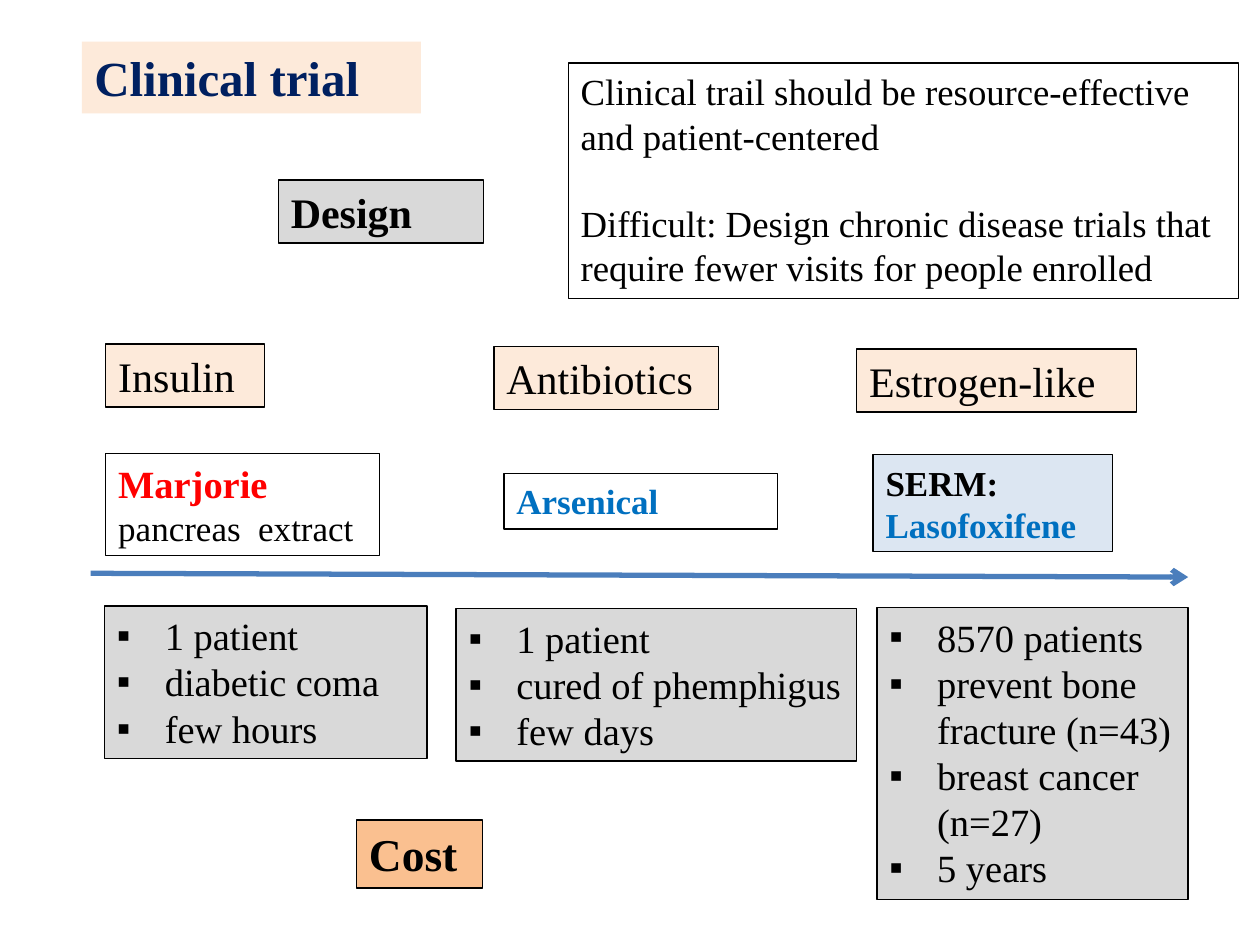
"""Builds a slide that compares the design and cost of three clinical trials."""
import pptx
import pptx.dml.color
import pptx.enum.text
import pptx.oxml
import pptx.oxml.ns
import pptx.util

Inches = pptx.util.Inches
Pt = pptx.util.Pt

FONT = "Times New Roman"
BLACK, NAVY, RED, BLUE = "000000", "002060", "FF0000", "0070C0"
PEACH, GRAY, ORANGE, PALE_BLUE = "FDEADA", "D9D9D9", "FAC090", "DCE6F2"
ARROW_BLUE = "4B7EBC"


def color(hex_value):
    return pptx.dml.color.RGBColor.from_string(hex_value)


def add_element(parent, tag, **attributes):
    element = pptx.oxml.parse_xml(f"<a:{tag} {pptx.oxml.ns.nsdecls('a')}/>")
    for name, value in attributes.items():
        element.set(name, value)
    parent.append(element)


class TrialSlide:
    def __init__(self, slide):
        self.slide = slide

    def box(self, left, top, width, height, fill=None, line_width=0.75):
        shape = self.slide.shapes.add_textbox(
            Inches(left), Inches(top), Inches(width), Inches(height))
        if fill:
            shape.fill.solid()
            shape.fill.fore_color.rgb = color(fill)
        if line_width:
            shape.line.color.rgb = color(BLACK)
            shape.line.width = Pt(line_width)
        frame = shape.text_frame
        frame.word_wrap = True
        frame.auto_size = pptx.enum.text.MSO_AUTO_SIZE.SHAPE_TO_FIT_TEXT
        return frame

    def run(self, paragraph, text, size, text_color=BLACK, bold=False):
        run = paragraph.add_run()
        run.text = text
        run.font.name = FONT
        run.font.size = Pt(size)
        run.font.bold = bold
        run.font.color.rgb = color(text_color)

    def label(self, place, runs, fill=None, line_width=0.75):
        paragraph = self.box(*place, fill, line_width).paragraphs[0]
        for run in runs:
            self.run(paragraph, *run)

    def paragraphs(self, place, texts, size, fill=None, gap=0, bullet=None):
        frame = self.box(*place, fill)
        for index, text in enumerate(texts):
            paragraph = frame.add_paragraph() if index else frame.paragraphs[0]
            if index and gap:
                paragraph.space_before = Pt(gap)
            if bullet:
                properties = paragraph._p.get_or_add_pPr()
                indent = Inches(0.38)
                properties.set("marL", str(indent))
                properties.set("indent", str(-indent))
                add_element(properties, "buFont", typeface="Wingdings")
                properties[-1].set("typeface", "Arial")
                add_element(properties, "buChar", char=bullet)
            self.run(paragraph, text, size)

    def arrow(self, start, end, line_color, width):
        connector = self.slide.shapes.add_connector(
            pptx.enum.shapes.MSO_CONNECTOR.STRAIGHT,
            *(Inches(value) for value in (*start, *end)))
        connector.line.color.rgb = color(line_color)
        connector.line.width = Pt(width)
        add_element(connector.line._get_or_add_ln(), "tailEnd", type="arrow")
        add_element(connector._element.spPr, "effectLst")


def main():
    presentation = pptx.Presentation()
    presentation.slide_width = Inches(10)
    presentation.slide_height = Inches(7.5)
    trial = TrialSlide(presentation.slides.add_slide(presentation.slide_layouts[6]))

    trial.label((0.65, 0.33, 2.69, 0.57), [("Clinical trial", 28, NAVY, True)], PEACH, None)
    trial.arrow((0.72, 4.55), (9.43, 4.58), ARROW_BLUE, 3)
    trial.label((2.21, 1.43, 1.63, 0.5), [("Design", 24, BLACK, True)], GRAY)
    trial.label((2.83, 6.51, 1, 0.54), [("Cost", 26, BLACK, True)], ORANGE, 1)
    trial.paragraphs(
        (4.51, 0.5, 5.32, 1.87),
        ["Clinical trail should be resource-effective and patient-centered",
         "Difficult: Design chronic disease trials that require fewer visits for people enrolled"],
        21, gap=25)

    for place, drug in (
        ((0.84, 2.73, 1.26, 0.5), "Insulin"),
        ((3.92, 2.75, 1.78, 0.5), "Antibiotics"),
        ((6.8, 2.77, 2.22, 0.5), "Estrogen-like"),
    ):
        trial.label(place, [(drug, 24)], PEACH)

    trial.label((0.84, 3.6, 2.17, 0.81),
                [("Marjorie ", 22, RED, True), ("pancreas  extract", 20)])
    trial.label((4, 3.76, 2.17, 0.44), [("Arsenical", 20, BLUE, True)])
    trial.label((6.93, 3.61, 1.9, 0.77),
                [("SERM: ", 20, BLACK, True), ("Lasofoxifene", 20, BLUE, True)], PALE_BLUE)

    for place, facts in (
        ((0.83, 4.81, 2.56, 1.21), ["1 patient", "diabetic coma", "few hours"]),
        ((3.62, 4.83, 3.18, 1.21), ["1 patient", "cured of phemphigus", "few days"]),
        ((6.96, 4.82, 2.47, 2.32),
         ["8570 patients", "prevent bone fracture (n=43)", "breast cancer (n=27)", "5 years"]),
    ):
        trial.paragraphs(place, facts, 22, GRAY, bullet="▪")

    presentation.save("out.pptx")


if __name__ == "__main__":
    main()
